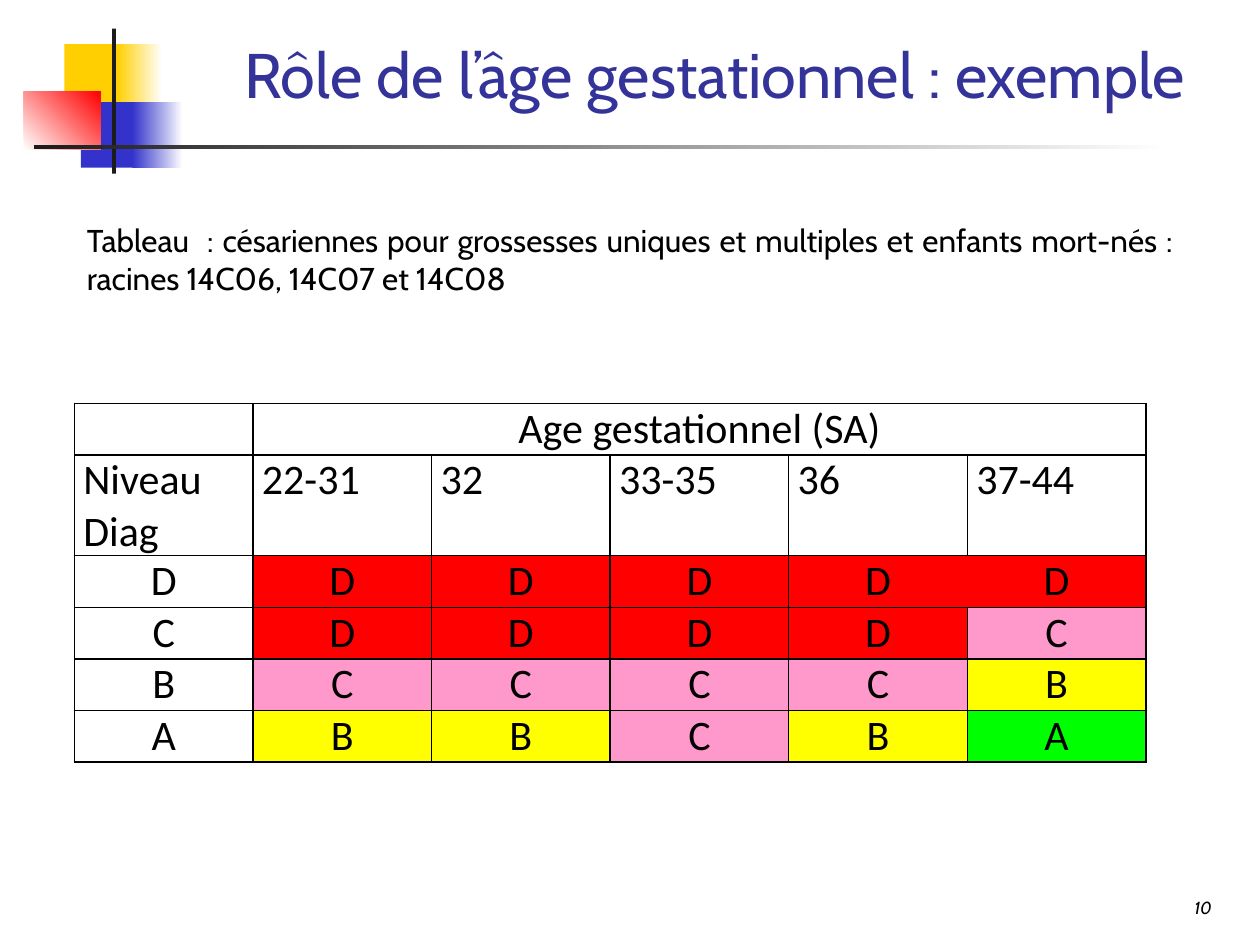
"""Build the slide on the role of gestational age, with its severity table."""
from lxml import etree
from pptx import Presentation
from pptx.dml import color as dml
from pptx.enum import shapes, text
from pptx.oxml import ns
from pptx.util import Cm, Pt

COLOURS = {
    "title": "333399", "ink": "000000", "paper": "FFFFFF", "rule": "1C1C1C",
    "gold": "FFCF01", "blue": "3333CC", "red": "FF0000",
}
LEVELS = {"D": "FF0000", "C": "FF99CC", "B": "FFFF00", "A": "00FF00"}

ORNAMENTS = [
    ((1.3, 0.89, 1.22, 1.32), "gold", None, 0),
    ((2.36, 0.89, 0.91, 1.32), "gold", "paper", 0),
    ((1.63, 2.06, 1.17, 1.32), "blue", None, 0),
    ((2.67, 2.06, 1.02, 1.32), "blue", "paper", 0),
    ((0.48, 1.85, 1.55, 1.17), "paper", "red", 45),
    ((2.26, 0.58, 0.08, 2.92), "rule", None, 0),
    ((0.69, 2.92, 22.86, 0.08), "rule", "paper", 0),
]

ALIGN, ANCHOR = text.PP_ALIGN, text.MSO_ANCHOR
TEXTS = [
    ("Rôle de l’âge gestationnel : exemple", (4.01, 0.43, 20.8, 2.11),
     36, "title", ALIGN.CENTER, ANCHOR.MIDDLE, False),
    ("10", (20.29, 17.73, 4.39, 0.91),
     10, "ink", ALIGN.RIGHT, ANCHOR.BOTTOM, True),
    ("Tableau  : césariennes pour grossesses uniques et multiples et enfants "
     "mort-nés : racines 14C06, 14C07 et 14C08", (1.5, 4.34, 22.4, 2.57),
     18, "ink", ALIGN.JUSTIFY, ANCHOR.TOP, False),
]

AGE_HEADING = "Age gestationnel (SA)"
AGE_HEADERS = ["Niveau Diag", "22-31", "32", "33-35", "36", "37-44"]
SEVERITY = ["DDDDDD", "CDDDDC", "BCCCCB", "ABBCBA"]
TABLE_ORIGIN = (1.5, 8.13)
COLUMN_WIDTH = 3.6
ROW_HEIGHTS = [1.04, 2.0] + [1.04] * len(SEVERITY)
OPEN_SIDES = {(2, 4): "R", (2, 5): "L"}


def rgb(value):
    return dml.RGBColor.from_string(value)


def write(paragraph, words, font, size, colour, align, italic=False):
    paragraph.alignment = align
    run = paragraph.add_run()
    run.text = words
    run.font.name, run.font.size, run.font.italic = font, Pt(size), italic
    run.font.color.rgb = rgb(COLOURS[colour])


def add_ornament(slide, box, start, end, angle):
    block = slide.shapes.add_shape(shapes.MSO_SHAPE.RECTANGLE, *map(Cm, box))
    block.shadow.inherit = False
    block.line.fill.background()
    if end is None:
        block.fill.solid()
        block.fill.fore_color.rgb = rgb(COLOURS[start])
        return
    block.fill.gradient()
    block.fill.gradient_angle = angle
    for stop, name in zip(block.fill.gradient_stops, (start, end)):
        stop.color.rgb = rgb(COLOURS[name])


def add_text(slide, words, box, size, colour, align, anchor, italic):
    frame = slide.shapes.add_textbox(*map(Cm, box)).text_frame
    frame.word_wrap = True
    frame.vertical_anchor = anchor
    write(frame.paragraphs[0], words, "Cabin", size, colour, align, italic)


def draw_borders(cell, open_side):
    properties = cell._tc.get_or_add_tcPr()
    for side in "LRTB":
        line = etree.SubElement(properties, ns.qn(f"a:ln{side}"), w=str(Pt(1)))
        if side == open_side:
            etree.SubElement(line, ns.qn("a:noFill"))
        else:
            fill = etree.SubElement(line, ns.qn("a:solidFill"))
            etree.SubElement(fill, ns.qn("a:srgbClr"), val=COLOURS["ink"])


def add_severity_table(slide):
    rows = [["", AGE_HEADING, "", "", "", ""], AGE_HEADERS, *SEVERITY]
    columns = len(AGE_HEADERS)
    grid = slide.shapes.add_table(
        len(rows), columns, *map(Cm, TABLE_ORIGIN),
        Cm(COLUMN_WIDTH * columns), Cm(sum(ROW_HEIGHTS))).table
    grid.first_row = grid.horz_banding = False
    for column in grid.columns:
        column.width = Cm(COLUMN_WIDTH)
    for row, height in zip(grid.rows, ROW_HEIGHTS):
        row.height = Cm(height)
    for r, row in enumerate(rows):
        for c, words in enumerate(row):
            cell = grid.cell(r, c)
            cell.margin_left = cell.margin_right = Cm(0.18)
            cell.margin_top = cell.margin_bottom = 0
            draw_borders(cell, OPEN_SIDES.get((r, c)))
            if r > 1 and c > 0:
                cell.fill.solid()
                cell.fill.fore_color.rgb = rgb(LEVELS[words])
            else:
                cell.fill.background()
            if words:
                align = ALIGN.JUSTIFY if r == 1 else ALIGN.CENTER
                write(cell.text_frame.paragraphs[0], words, "Calibri", 24, "ink", align)
    grid.cell(0, 1).merge(grid.cell(0, columns - 1))


def main():
    deck = Presentation()
    deck.slide_width, deck.slide_height = Cm(25.4), Cm(19.05)
    slide = deck.slides.add_slide(deck.slide_layouts[6])
    for ornament in ORNAMENTS:
        add_ornament(slide, *ornament)
    for entry in TEXTS:
        add_text(slide, *entry)
    add_severity_table(slide)
    deck.save("out.pptx")


if __name__ == "__main__":
    main()
